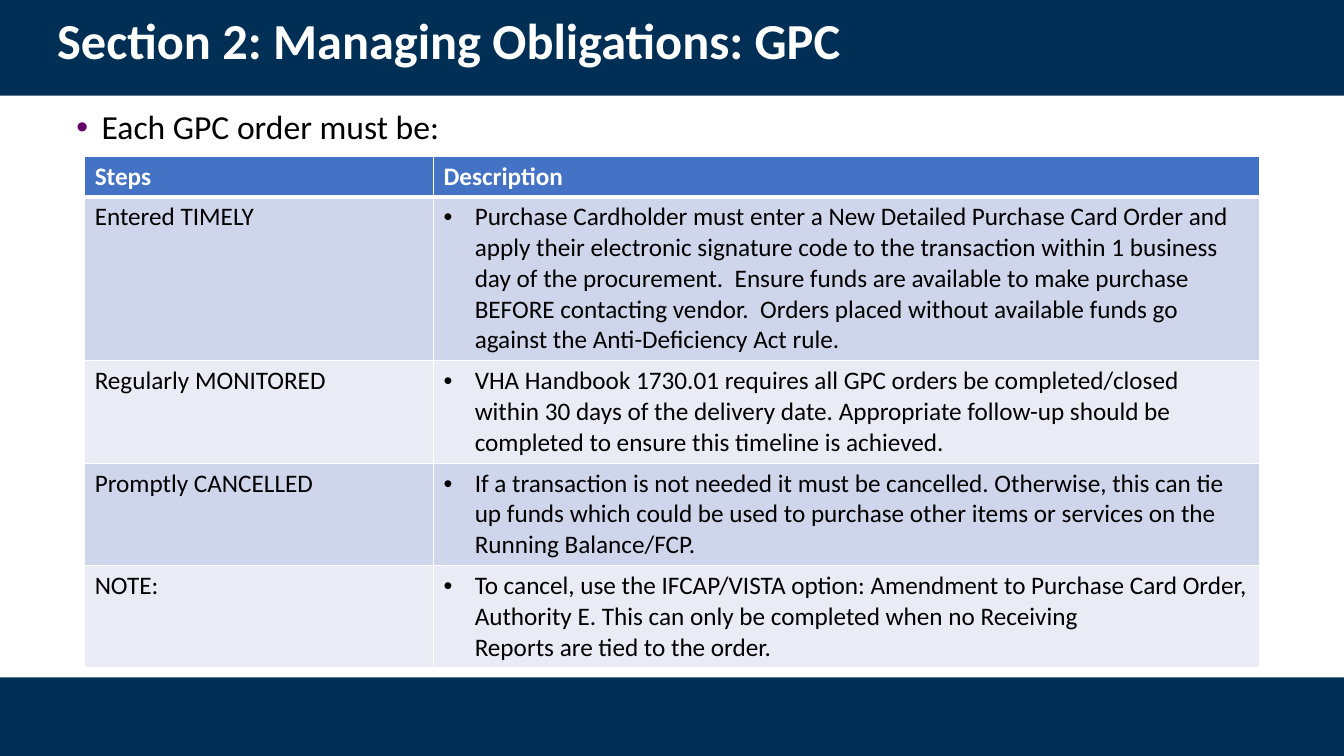
from typing import NamedTuple

from lxml import etree
from pptx import Presentation, util as u
from pptx.dml.color import RGBColor
from pptx.enum import shapes, text
from pptx.oxml import ns

WIDTH, HEIGHT = u.Inches(13.33), u.Inches(7.5)
FONT = "Calibri"
COLORS = {
    "navy": "002F56", "white": "FFFFFF", "black": "000000", "purple": "660066",
    "header": "4472C4", "odd": "CFD5EA", "even": "E9EBF5",
}


class Box(NamedTuple):
    """Left, top, width and height in percent of the slide."""
    left: float
    top: float
    width: float
    height: float


class Step(NamedTuple):
    name: str
    lines: tuple[str, ...]
    height: float


BANDS = [Box(0, 0, 100, 12.67), Box(0, 89.6, 100, 10.4)]
TITLE = Box(3.5, 0, 95.25, 18.93)
INTRO = Box(1.2, 14, 89.2, 72)
TABLE = Box(6.3, 20.67, 87.4, 67.7)
COLUMNS = [25.95, 61.45]
STEPS = [
    Step("Steps", ("Description",), 5.35),
    Step("Entered TIMELY", (
        "Purchase Cardholder must enter a New Detailed Purchase Card Order and apply their "
        "electronic signature code to the transaction within 1 business day of the procurement.  "
        "Ensure funds are available to make purchase BEFORE contacting vendor.  Orders placed "
        "without available funds go against the Anti-Deficiency Act rule.",), 21.7),
    Step("Regularly MONITORED", (
        "VHA Handbook 1730.01 requires all GPC orders be completed/closed within 30 days of the "
        "delivery date. Appropriate follow-up should be completed to ensure this timeline is "
        "achieved.",), 13.55),
    Step("Promptly CANCELLED", (
        "If a transaction is not needed it must be cancelled. Otherwise, this can tie up funds "
        "which could be used to purchase other items or services on the Running Balance/FCP.",),
        13.55),
    Step("NOTE:", (
        "To cancel, use the IFCAP/VISTA option: Amendment to Purchase Card Order, Authority E. "
        "This can only be completed when no Receiving",
        "Reports are tied to the order."), 13.55),
]


def across(share: float) -> int:
    return round(WIDTH * share / 100)


def down(share: float) -> int:
    return round(HEIGHT * share / 100)


def place(box: Box) -> tuple[int, int, int, int]:
    return across(box.left), down(box.top), across(box.width), down(box.height)


def rgb(name: str) -> RGBColor:
    return RGBColor.from_string(COLORS[name])


def add_run(p, words: str, size: float, color: str, bold: bool = False) -> None:
    r = p.add_run()
    r.text = words
    r.font.name, r.font.size, r.font.bold = FONT, u.Pt(size), bold
    r.font.color.rgb = rgb(color)


def add_bullet(p, margin: float, hanging: float, color: str) -> None:
    props = p._p.get_or_add_pPr()
    props.set("marL", str(u.Inches(margin)))
    props.set("indent", str(-u.Inches(hanging)))
    tint = etree.SubElement(props, ns.qn("a:buClr"))
    etree.SubElement(tint, ns.qn("a:srgbClr"), val=COLORS[color])
    etree.SubElement(props, ns.qn("a:buFont"), typeface="Arial")
    etree.SubElement(props, ns.qn("a:buChar"), char="•")


def set_borders(cell, bottom: float) -> None:
    """Draw white cell edges, 1 pt except for the bottom one."""
    props = cell._tc.get_or_add_tcPr()
    edges = {"a:lnL": 1, "a:lnR": 1, "a:lnT": 1, "a:lnB": bottom}
    for i, (edge, width) in enumerate(edges.items()):
        line = etree.Element(ns.qn(edge), w=str(u.Pt(width)))
        fill = etree.SubElement(line, ns.qn("a:solidFill"))
        etree.SubElement(fill, ns.qn("a:srgbClr"), val=COLORS["white"])
        props.insert(i, line)


def add_bands(s) -> None:
    for box in BANDS:
        sp = s.shapes.add_shape(shapes.MSO_SHAPE.RECTANGLE, *place(box))
        sp.shadow.inherit = False
        sp.fill.solid()
        sp.fill.fore_color.rgb = rgb("navy")
        sp.line.fill.background()
        s.shapes.title.element.addprevious(sp.element)


def add_title(s) -> None:
    sp = s.shapes.title
    sp.left, sp.top, sp.width, sp.height = place(TITLE)
    tf = sp.text_frame
    tf.auto_size = text.MSO_AUTO_SIZE.NONE
    tf.vertical_anchor = text.MSO_ANCHOR.TOP
    tf.margin_top = u.Inches(0.16)
    p = tf.paragraphs[0]
    p.alignment, p.line_spacing = text.PP_ALIGN.LEFT, 0.9
    add_run(p, "Section 2: Managing Obligations: GPC", 36, "white", True)


def add_intro(s) -> None:
    tf = s.shapes.add_textbox(*place(INTRO)).text_frame
    tf.word_wrap = True
    p = tf.paragraphs[0]
    p.line_spacing = 0.9
    add_bullet(p, 0.75, 0.25, "purple")
    add_run(p, "Each GPC order must be:", 24, "black")


def add_steps(s) -> None:
    table = s.shapes.add_table(len(STEPS), len(COLUMNS), *place(TABLE)).table
    for column, share in zip(table.columns, COLUMNS):
        column.width = across(share)
    for i, step in enumerate(STEPS):
        head = i == 0
        table.rows[i].height = down(step.height)
        fill = "header" if head else "odd" if i % 2 else "even"
        for j, lines in enumerate([(step.name,), step.lines]):
            cell = table.cell(i, j)
            cell.fill.solid()
            cell.fill.fore_color.rgb = rgb(fill)
            set_borders(cell, 3 if head else 1)
            p = cell.text_frame.paragraphs[0]
            if j and not head:
                add_bullet(p, 0.31, 0.31, "black")
            for k, words in enumerate(lines):
                if k:
                    p.add_line_break()
                add_run(p, words, 18, "white" if head else "black", head)


def main() -> None:
    prs = Presentation()
    prs.slide_width, prs.slide_height = WIDTH, HEIGHT
    s = prs.slides.add_slide(prs.slide_layouts.get_by_name("Title Only"))
    add_bands(s)
    add_title(s)
    add_intro(s)
    add_steps(s)
    prs.save("out.pptx")


if __name__ == "__main__":
    main()
